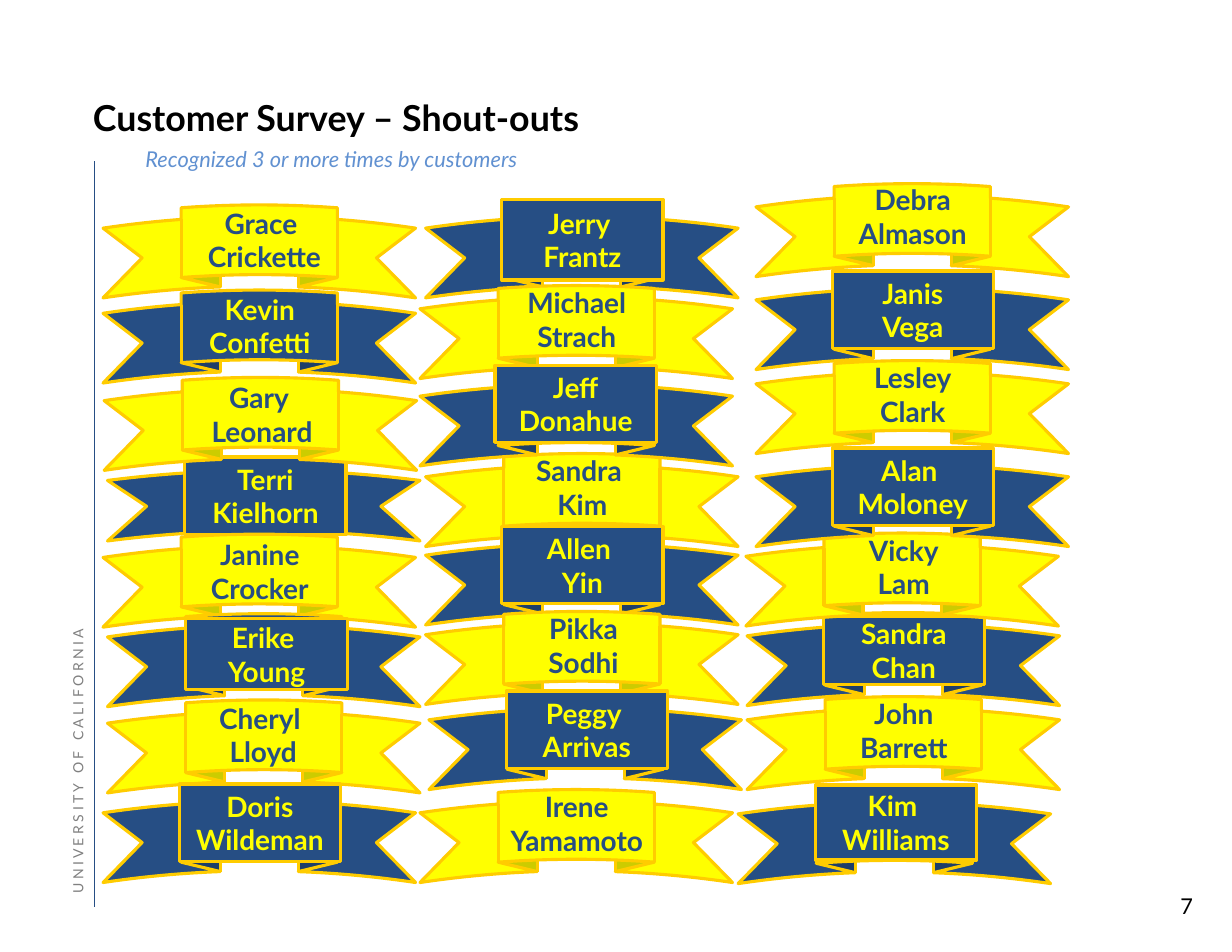
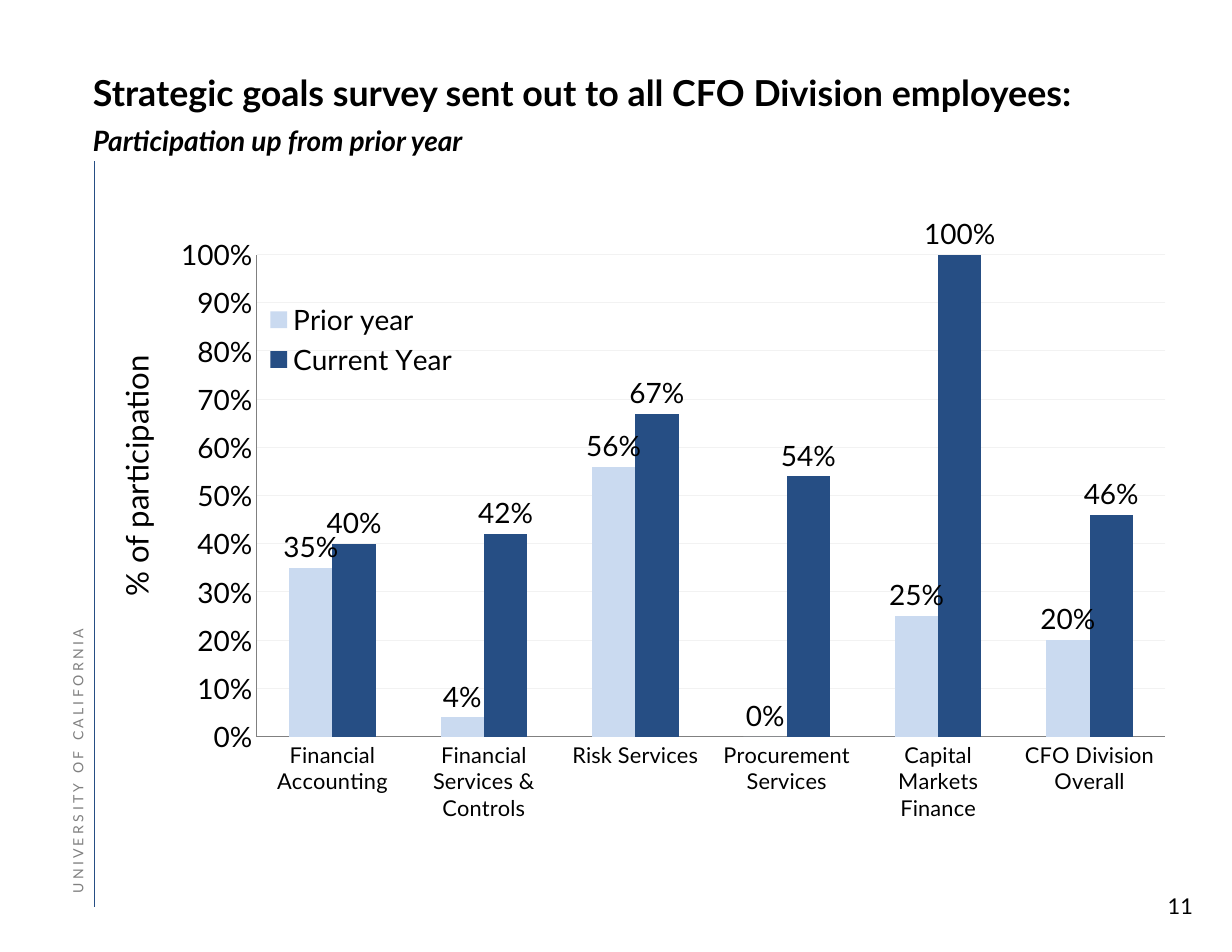
from dataclasses import dataclass

from lxml import etree
from pptx import Presentation
from pptx.chart.data import CategoryChartData
from pptx.dml.color import RGBColor
from pptx.enum.chart import XL_CHART_TYPE, XL_LABEL_POSITION, XL_LEGEND_POSITION, XL_TICK_MARK
from pptx.enum.shapes import MSO_CONNECTOR, MSO_SHAPE
from pptx.enum.text import MSO_ANCHOR, MSO_AUTO_SIZE, PP_ALIGN
from pptx.oxml.ns import qn
from pptx.util import Pt

EMU_PER_PX = 9144  # 100 px to the inch
FONT = "Lato"
COLORS = {
    "black": "000000",
    "grey": "808080",
    "grid": "F2F2F2",
    "blue": "264E84",
    "mid_blue": "6191D1",
    "pale_blue": "CADAF0",
    "yellow": "FFFF00",
    "gold": "FFCC00",
}
OPPOSITE = {"blue": "yellow", "yellow": "blue"}
RIBBON_W, RIBBON_H, LABEL_W = 279, 83, 144


@dataclass
class Banner:
    """A ribbon with a name; a plate is a framed label with no text wrap."""
    name: str
    color: str
    x: int
    y: int
    label_x: int
    label_y: int
    label_h: int = 71
    plate: bool = False
    height: int = RIBBON_H


def yellow(name, x, y, label_x, label_y, label_h=71):
    return Banner(name, "yellow", x, y, label_x, label_y, label_h)


def plated(name, x, y, label_x, label_y, label_h=69, height=RIBBON_H):
    return Banner(name, "blue", x, y, label_x, label_y, label_h, True, height)


# Listed from back to front, as neighbouring ribbons overlap
BANNERS = [
    yellow("Grace \nCrickette", 92, 183, 164, 179),
    plated("Jerry \nFrantz", 380, 183, 448, 178, 72),
    Banner("Kevin Confetti", "blue", 92, 259, 160, 256),
    plated("Terri\nKielhorn", 96, 411, 165, 408, height=72),
    yellow("Gary \nLeonard", 93, 337, 162, 335),
    yellow("Janine Crocker", 92, 477, 160, 475),
    plated("Erike \nYoung", 96, 548, 166, 552, 64),
    yellow("Cheryl \nLloyd", 96, 625, 163, 621, 55),
    yellow("Sandra \nKim", 380, 405, 448, 400),
    plated("Allen \nYin", 380, 475, 448, 470),
    yellow("Pikka\nSodhi", 380, 546, 449, 541),
    plated("Peggy \nArrivas", 383, 622, 452, 617),
    plated("Doris\nWildeman", 92, 705, 160, 700),
    yellow("Irene\nYamamoto", 375, 705, 443, 700),
    plated("Kim \nWilliams", 659, 706, 728, 701, 67),
    yellow("John Barrett", 667, 622, 735, 617),
    plated("Sandra\nChan", 667, 547, 735, 550, 61),
    yellow("Vicky\nLam", 666, 476, 735, 471),
    plated("Alan \nMoloney", 675, 405, 743, 400),
    yellow("Michael\nStrach", 375, 255, 443, 250),
    plated("Jeff\nDonahue", 375, 333, 442, 326),
    yellow("Lesley\nClark", 675, 322, 743, 317),
    plated("Janis\nVega", 675, 247, 743, 242),
    yellow("Debra\nAlmason", 675, 164, 743, 158),
]

PARTICIPATION = {
    "Financial Accounting": (0.35, 0.40),
    "Financial Services & Controls": (0.04, 0.42),
    "Risk Services": (0.56, 0.67),
    "Procurement Services": (0, 0.54),
    "Capital Markets Finance": (0.25, 1),
    "CFO Division Overall": (0.20, 0.46),
}
SERIES = {"Prior year": "pale_blue", "Current Year": "blue"}


def px(*lengths):
    return [n * EMU_PER_PX for n in lengths]


def rgb(name):
    return RGBColor.from_string(COLORS[name])


def style_font(font, size, color="black", bold=False, italic=False):
    font.name, font.size = FONT, Pt(size)
    font.color.rgb = rgb(color)
    font.bold, font.italic = bold, italic


def set_insets(tf, inset):
    tf.margin_left = tf.margin_top = tf.margin_right = tf.margin_bottom = inset * EMU_PER_PX


def set_text(tf, text, size, color="black", align=PP_ALIGN.CENTER, **font):
    tf.text = text
    for p in tf.paragraphs:
        p.alignment = align
        for r in p.runs:
            style_font(r.font, size, color, **font)


def add_text(shapes, box, text, size, color="black", rotation=0, **options):
    sp = shapes.add_textbox(*px(*box))
    sp.rotation = rotation
    sp.text_frame.word_wrap = True
    set_text(sp.text_frame, text, size, color, **options)
    return sp


def add_block(shapes, kind, box, fill):
    """Add a gold-edged shape."""
    sp = shapes.add_shape(kind, *px(*box))
    sp.shadow.inherit = False
    sp.fill.solid()
    sp.fill.fore_color.rgb = rgb(fill)
    sp.line.color.rgb = rgb("gold")
    sp.line.width = Pt(2)
    return sp


def add_banner(s, banner):
    shapes = s.shapes.add_group_shape().shapes
    add_block(shapes, MSO_SHAPE.CURVED_UP_RIBBON,
              (banner.x, banner.y, RIBBON_W, banner.height), banner.color)
    box = (banner.label_x, banner.label_y, LABEL_W, banner.label_h)
    ink = OPPOSITE[banner.color]
    if banner.plate:
        tf = add_block(shapes, MSO_SHAPE.RECTANGLE, box, banner.color).text_frame
        tf.word_wrap = False
        tf.vertical_anchor = MSO_ANCHOR.MIDDLE
        set_insets(tf, 5)
        set_text(tf, banner.name, 18, ink, bold=True)
    else:
        add_text(shapes, box, banner.name, 18, ink, bold=True)


def add_title(s, box, title, subtitle=None):
    sp = s.shapes.title
    sp.left, sp.top, sp.width, sp.height = px(*box)
    tf = sp.text_frame
    tf.auto_size = MSO_AUTO_SIZE.NONE
    tf.word_wrap = True
    tf.vertical_anchor = MSO_ANCHOR.BOTTOM
    set_insets(tf, 0)
    text = f"{title}\n{subtitle}" if subtitle else title
    set_text(tf, text, 23, align=PP_ALIGN.LEFT, bold=True)
    for p in tf.paragraphs:
        p.line_spacing = Pt(27.9)
    if subtitle:
        style_font(tf.paragraphs[1].runs[0].font, 18, bold=True, italic=True)


def add_frame(s, number):
    """Add the side rule, the side lettering and the page number."""
    rule = s.shapes.add_connector(MSO_CONNECTOR.STRAIGHT, *px(84, 144, 84, 810))
    rule.line.color.rgb = rgb("blue")
    rule.line.width = Pt(0.35)
    etree.SubElement(rule._element.spPr, qn("a:effectLst"))
    add_text(s.shapes, (1025, 792, 50, 33), str(number), 14, align=PP_ALIGN.RIGHT)
    lettering = add_text(s.shapes, (-147, 574, 433, 15), " ".join("UNIVERSITY OF CALIFORNIA"),
                         9, "grey", rotation=270, align=PP_ALIGN.LEFT)
    tf = lettering.text_frame
    set_insets(tf, 0)
    tf.vertical_anchor = MSO_ANCHOR.BOTTOM
    tf.paragraphs[0].line_spacing = Pt(12)


def new_slide(prs, number):
    s = prs.slides.add_slide(prs.slide_layouts[5])
    add_frame(s, number)
    return s


def place_part(parent, index, x, y, w, h, inner=False):
    """Give a chart part a fixed place, in fractions of the chart."""
    for old in parent.findall(qn("c:layout")):
        parent.remove(old)
    layout = etree.Element(qn("c:layout"))
    manual = etree.SubElement(layout, qn("c:manualLayout"))
    values = {"layoutTarget": "inner"} if inner else {}
    values.update(xMode="edge", yMode="edge", x=x, y=y, w=w, h=h)
    for tag, value in values.items():
        etree.SubElement(manual, qn(f"c:{tag}")).set("val", str(value))
    parent.insert(index, layout)


def style_axis(axis, size):
    axis.major_tick_mark = axis.minor_tick_mark = XL_TICK_MARK.NONE
    axis.format.line.color.rgb = rgb("grey")
    style_font(axis.tick_labels.font, size)


def add_participation_chart(s):
    data = CategoryChartData(number_format="0%")
    data.categories = list(PARTICIPATION)
    for name, values in zip(SERIES, zip(*PARTICIPATION.values())):
        data.add_series(name, values)
    chart = s.shapes.add_chart(XL_CHART_TYPE.COLUMN_CLUSTERED, *px(108, 183, 933, 633), data).chart
    chart.has_title = False
    style_font(chart.font, 18)

    style_axis(chart.category_axis, 14)
    axis = chart.value_axis
    style_axis(axis, 18)
    axis.minimum_scale, axis.maximum_scale, axis.major_unit = 0, 1, 0.1
    axis.tick_labels.number_format = "0%"
    axis.tick_labels.number_format_is_linked = False
    axis.major_gridlines.format.line.color.rgb = rgb("grid")
    axis.major_gridlines.format.line.width = Pt(0.75)

    plot = chart.plots[0]
    plot.gap_width, plot.overlap = 150, 0
    plot.vary_by_categories = False
    for series, color in zip(plot.series, SERIES.values()):
        series.format.fill.solid()
        series.format.fill.fore_color.rgb = rgb(color)
        labels = series.data_labels
        labels.show_value = True
        labels.number_format = "0%"
        labels.number_format_is_linked = False
        labels.position = XL_LABEL_POSITION.OUTSIDE_END
        style_font(labels.font, 18)

    chart.has_legend = True
    legend = chart.legend
    legend.position = XL_LEGEND_POSITION.RIGHT
    legend.include_in_layout = False
    style_font(legend.font, 18)
    place_part(chart._chartSpace.chart.plotArea, 0, 0.13, 0.07, 0.87, 0.68, inner=True)
    place_part(legend._element, 1, 0.13, 0.13, 0.2, 0.12)


def build_shout_outs(prs):
    s = new_slide(prs, 7)
    add_title(s, (83, 92, 475, 32), "Customer Survey – Shout-outs")
    add_text(s.shapes, (100, 125, 392, 34), "Recognized 3 or more times by customers",
             14, "mid_blue", italic=True)
    for banner in BANNERS:
        add_banner(s, banner)


def build_participation(prs):
    s = new_slide(prs, 11)
    add_title(s, (83, 58, 950, 82), "Strategic goals survey sent out to all CFO Division employees:",
              "Participation up from prior year")
    add_participation_chart(s)
    add_text(s.shapes, (-3, 403, 250, 44), "% of participation", 20, rotation=270)


def main():
    prs = Presentation()
    prs.slide_width, prs.slide_height = px(1100, 850)
    build_shout_outs(prs)
    build_participation(prs)
    prs.save("out.pptx")


if __name__ == "__main__":
    main()
